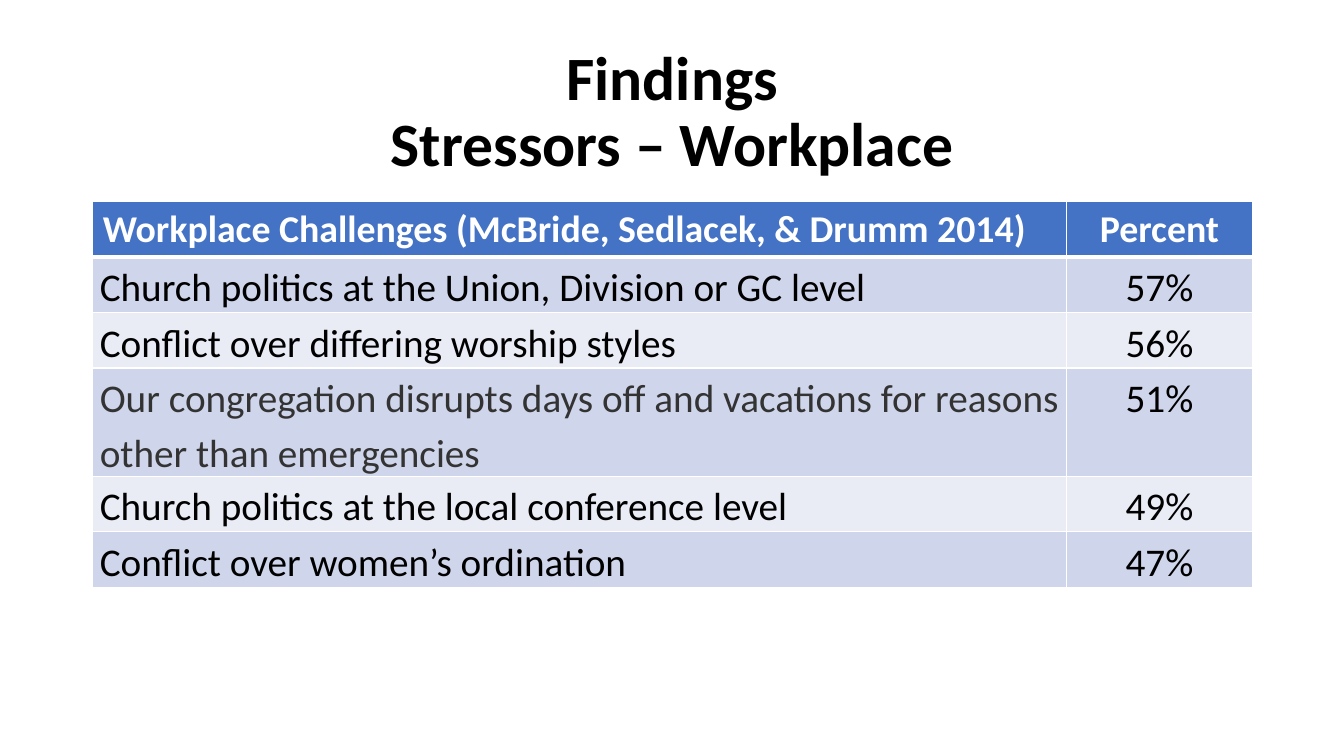
from lxml import etree
from pptx import Presentation, util as u
from pptx.dml.color import RGBColor
from pptx.enum import text
from pptx.oxml import ns

BLACK = RGBColor(0, 0, 0)
GREY = RGBColor(0x33, 0x33, 0x33)
WHITE = RGBColor(0xFF, 0xFF, 0xFF)
BLUE = RGBColor(0x44, 0x72, 0xC4)
BANDS = RGBColor(0xCF, 0xD5, 0xEA), RGBColor(0xE9, 0xEB, 0xF5)
FONT = "Calibri"
WIDE, HIGH = u.Inches(13.33), u.Inches(7.5)
LEFT, SPAN = u.Inches(0.92), u.Inches(11.5)
ROW = u.Inches(0.55)
SHARES = 0.84, 0.16
HEAD = "Workplace Challenges (McBride, Sedlacek, & Drumm 2014)", "Percent"
ITEMS = [
    ("Church politics at the Union, Division or GC level", "57%", BLACK),
    ("Conflict over differing worship styles", "56%", BLACK),
    ("Our congregation disrupts days off and vacations for reasons "
     "other than emergencies", "51%", GREY),
    ("Church politics at the local conference level", "49%", BLACK),
    ("Conflict over women’s ordination", "47%", BLACK),
]


def add_run(para, words, size, color, bold=False):
    """Add one styled run to a paragraph."""
    run = para.add_run()
    run.text = words
    font = run.font
    font.name, font.size, font.bold = FONT, u.Pt(size), bold
    font.color.rgb = color


def add_title(slide, lines):
    """Add the centred title, one run per line."""
    box = slide.shapes.add_textbox(LEFT, u.Inches(0.4), SPAN, u.Inches(1.45))
    frame = box.text_frame
    frame.word_wrap = True
    frame.vertical_anchor = text.MSO_ANCHOR.MIDDLE
    para = frame.paragraphs[0]
    para.alignment = text.PP_ALIGN.CENTER
    para.line_spacing = 0.9
    for n, line in enumerate(lines):
        if n:
            para.add_line_break()
        add_run(para, line, 44, BLACK, True)


def add_rules(cell, top, base):
    """Draw white cell borders with the given top and bottom widths."""
    props = cell._tc.get_or_add_tcPr()
    for n, (side, width) in enumerate(zip("LRTB", (1, 1, top, base))):
        line = etree.Element(ns.qn(f"a:ln{side}"), w=str(u.Pt(width)))
        fill = etree.SubElement(line, ns.qn("a:solidFill"))
        etree.SubElement(fill, ns.qn("a:srgbClr"), val=str(WHITE))
        props.insert(n, line)


def fill_cell(cell, words, color, fill, col, head=False):
    """Fill one cell with a colour, borders and its words."""
    cell.fill.solid()
    cell.fill.fore_color.rgb = fill
    para = cell.text_frame.paragraphs[0]
    para.alignment = text.PP_ALIGN.CENTER if col else text.PP_ALIGN.LEFT
    if not head:
        cell.margin_left = cell.margin_right = u.Inches(0.07)
        cell.margin_top = cell.margin_bottom = 0
        para.line_spacing = 1.15
    add_run(para, words, 27 if head else 28, color, head)


def add_grid(slide):
    """Add the table of workplace challenges."""
    count = len(ITEMS) + 1
    grid = slide.shapes.add_table(
        count, len(SHARES), LEFT, u.Inches(2), SPAN, ROW * count).table
    for col, share in zip(grid.columns, SHARES):
        col.width = int(SPAN * share)
    for col, words in enumerate(HEAD):
        cell = grid.cell(0, col)
        fill_cell(cell, words, WHITE, BLUE, col, True)
        add_rules(cell, 1, 3)
    for row, (label, value, color) in enumerate(ITEMS, 1):
        band = BANDS[(row - 1) % 2]
        for col, (words, ink) in enumerate([(label, color), (value, BLACK)]):
            cell = grid.cell(row, col)
            fill_cell(cell, words, ink, band, col)
            add_rules(cell, 3 if row == 1 else 1, 1)


def main():
    """Build and save the slide."""
    deck = Presentation()
    deck.slide_width, deck.slide_height = WIDE, HIGH
    slide = deck.slides.add_slide(deck.slide_layouts[6])
    add_title(slide, ["Findings", "Stressors – Workplace"])
    add_grid(slide)
    deck.save("out.pptx")


if __name__ == "__main__":
    main()
